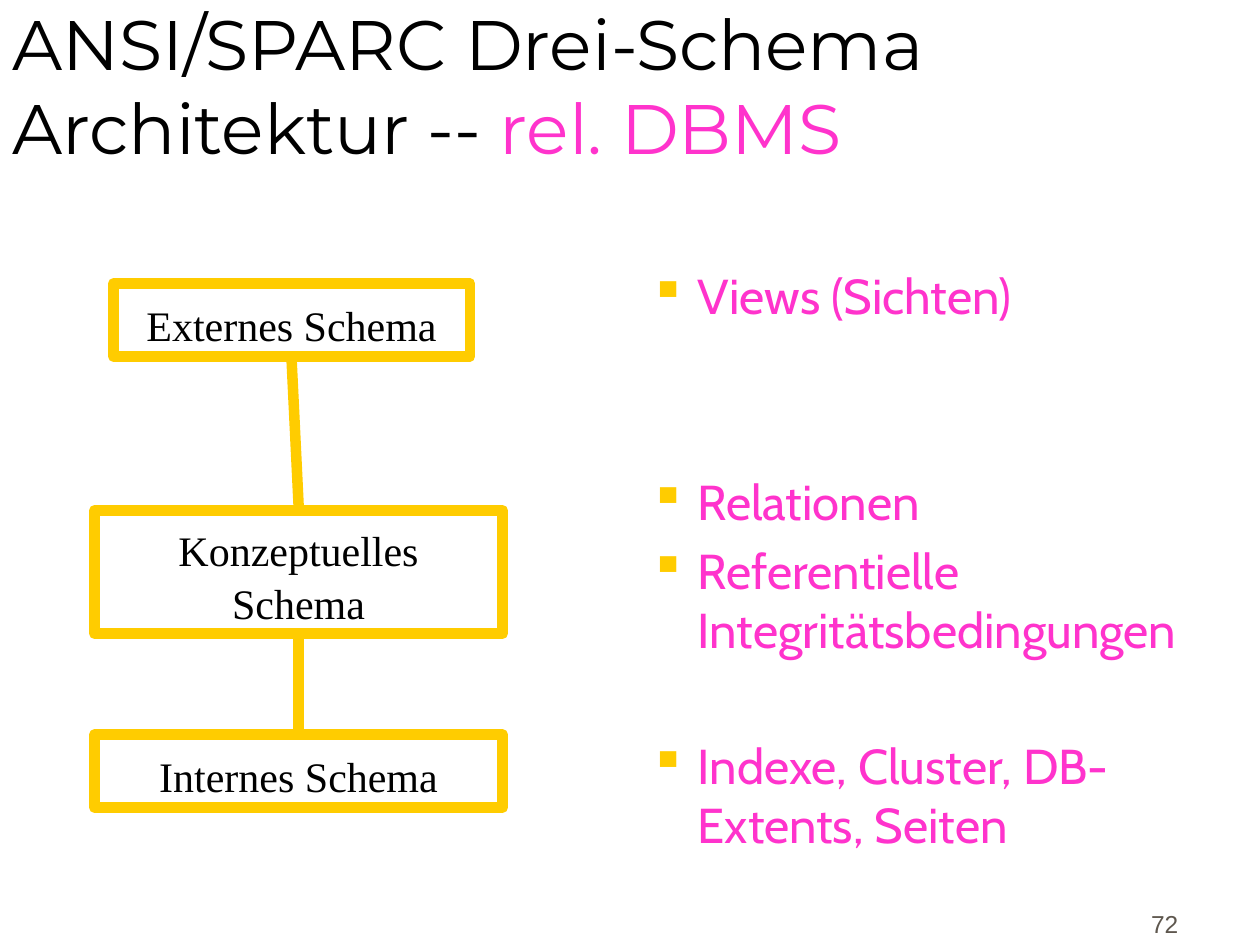
"""Build the slide on the three-schema architecture and its relational counterpart."""
from dataclasses import dataclass

import lxml.etree
import pptx
import pptx.dml.color
import pptx.enum.shapes
import pptx.enum.text
import pptx.oxml.ns
import pptx.util

RGB = pptx.dml.color.RGBColor
ALIGN = pptx.enum.text.PP_ALIGN
ANCHOR = pptx.enum.text.MSO_ANCHOR
BLACK = RGB(0x00, 0x00, 0x00)
WHITE = RGB(0xFF, 0xFF, 0xFF)
GOLD = RGB(0xFF, 0xCC, 0x00)
PINK = RGB(0xFF, 0x33, 0xCC)
GREY = RGB(0x5E, 0x57, 0x4E)
EDGE = pptx.util.Pt(6)
HANG = pptx.util.Inches(0.38)


@dataclass(frozen=True)
class Area:
    """A rectangle in grid cells of a tenth of an inch."""
    col: float
    row: float
    cols: float
    rows: float

    def place(self) -> tuple:
        """Return left, top, width and height as lengths."""
        return tuple(cell(n) for n in (self.col, self.row, self.cols, self.rows))


@dataclass(frozen=True)
class Level:
    """One schema level of the architecture."""
    label: str
    area: Area


@dataclass(frozen=True)
class Item:
    """One bulleted line and the gap in points above it."""
    label: str
    gap: float = 5.6


LEVELS = (
    Level("Externes Schema", Area(9, 22.5, 28.3, 5.8)),
    Level("Konzeptuelles Schema", Area(7.5, 40.5, 32.4, 9.8)),
    Level("Internes Schema", Area(7.5, 58.3, 32.4, 5.8)),
)
ITEMS = (
    Item("Views (Sichten)"),
    Item("Relationen", 84),
    Item("Referentielle Integritätsbedingungen"),
    Item("Indexe, Cluster, DB-Extents, Seiten", 44.5),
)


def cell(count: float) -> int:
    """Return the length of some grid cells."""
    return pptx.util.Inches(count / 10)


def style(para, face: str, size: float, color: RGB, align=ALIGN.LEFT) -> None:
    """Set the font and alignment of a paragraph."""
    para.font.name = face
    para.font.size = pptx.util.Pt(size)
    para.font.color.rgb = color
    para.alignment = align


def add_mark(para) -> None:
    """Give a paragraph a hanging square bullet."""
    props = para._p.get_or_add_pPr()
    props.set("marL", str(HANG))
    props.set("indent", str(-HANG))
    tag = pptx.oxml.ns.qn
    tint = lxml.etree.SubElement(props, tag("a:buClr"))
    lxml.etree.SubElement(tint, tag("a:srgbClr")).set("val", str(GOLD))
    lxml.etree.SubElement(props, tag("a:buChar")).set("char", "▪")


def add_title(slide) -> None:
    """Fill the title placeholder with its two colours."""
    title = slide.shapes.title
    title.left, title.top, title.width, title.height = Area(0, 0, 100, 13.9).place()
    frame = title.text_frame
    frame.auto_size = pptx.enum.text.MSO_AUTO_SIZE.NONE
    frame.vertical_anchor = ANCHOR.BOTTOM
    para = frame.paragraphs[0]
    style(para, "Montserrat", 40, BLACK)
    para.add_run().text = "ANSI/SPARC Drei-Schema "
    para.add_line_break()
    para.add_run().text = "Architektur -- "
    tail = para.add_run()
    tail.text = "rel. DBMS"
    tail.font.color.rgb = PINK


def add_level(slide, level: Level) -> None:
    """Draw the framed box of a schema level."""
    box = slide.shapes.add_shape(
        pptx.enum.shapes.MSO_SHAPE.RECTANGLE, *level.area.place())
    box.shadow.inherit = False
    box.fill.solid()
    box.fill.fore_color.rgb = WHITE
    box.line.color.rgb = GOLD
    box.line.width = EDGE
    frame = box.text_frame
    frame.word_wrap = True
    frame.vertical_anchor = ANCHOR.MIDDLE
    frame.margin_left = frame.margin_right = cell(1.5)
    frame.margin_top, frame.margin_bottom = cell(1), cell(0.5)
    para = frame.paragraphs[0]
    para.text = level.label
    para.line_spacing = 1.05
    style(para, "Times New Roman", 24, BLACK, ALIGN.CENTER)


def add_link(slide, upper: Area, lower: Area) -> None:
    """Join the top of the lower box to the bottom of the upper one."""
    half = EDGE // 2
    link = slide.shapes.add_connector(
        pptx.enum.shapes.MSO_CONNECTOR.STRAIGHT,
        cell(lower.col + lower.cols / 2), cell(lower.row) - half,
        cell(upper.col + upper.cols / 2), cell(upper.row + upper.rows) + half)
    link.line.color.rgb = GOLD
    link.line.width = EDGE
    lxml.etree.SubElement(link._element.spPr, pptx.oxml.ns.qn("a:effectLst"))


def add_list(slide, area: Area, items: tuple[Item, ...]) -> None:
    """Write the bulleted items."""
    frame = slide.shapes.add_textbox(*area.place()).text_frame
    frame.word_wrap = True
    for rank, item in enumerate(items):
        para = frame.add_paragraph() if rank else frame.paragraphs[0]
        para.text = item.label
        para.space_before = pptx.util.Pt(item.gap)
        add_mark(para)
        style(para, "Cabin", 28, PINK)


def add_page(slide, area: Area, label: str) -> None:
    """Write the page number."""
    frame = slide.shapes.add_textbox(*area.place()).text_frame
    frame.word_wrap = True
    frame.vertical_anchor = ANCHOR.BOTTOM
    para = frame.paragraphs[0]
    para.text = label
    style(para, "Arial", 14, GREY, ALIGN.RIGHT)


def main() -> None:
    """Build and save the slide."""
    deck = pptx.Presentation()
    deck.slide_width, deck.slide_height = cell(100), cell(75)
    slide = deck.slides.add_slide(deck.slide_layouts.get_by_name("Title Only"))
    add_page(slide, Area(84.7, 70, 9.8, 5), "72")
    add_title(slide)
    for level in LEVELS:
        add_level(slide, level)
    for upper, lower in zip(LEVELS, LEVELS[1:]):
        add_link(slide, upper.area, lower.area)
    add_list(slide, Area(50.6, 20.6, 46.9, 45.6), ITEMS)
    deck.save("out.pptx")


if __name__ == "__main__":
    main()
